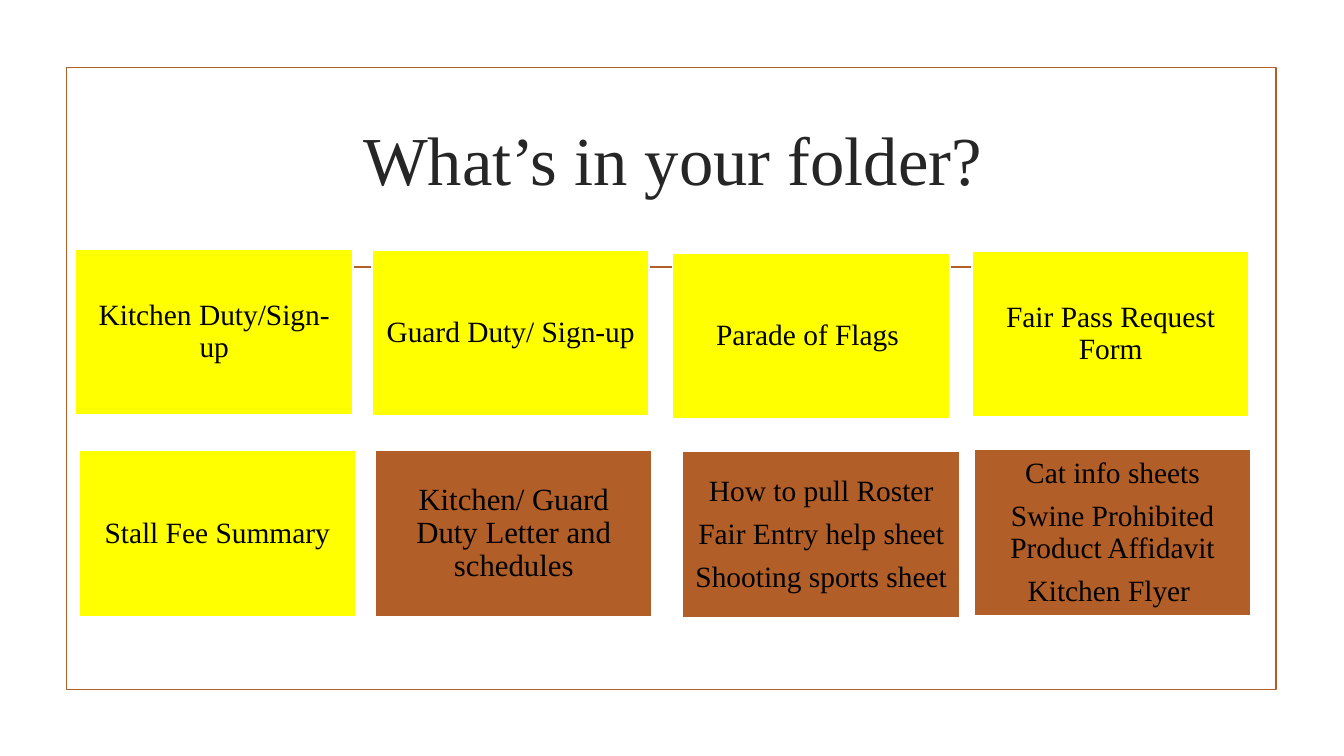
"""Build the folder contents slide: a framed title above two rows of cards."""
import pptx
import pptx.dml.color
import pptx.enum.shapes
import pptx.enum.text
import pptx.oxml
import pptx.util

Inches = pptx.util.Inches
Pt = pptx.util.Pt
RGBColor = pptx.dml.color.RGBColor
RECTANGLE = pptx.enum.shapes.MSO_SHAPE.RECTANGLE

THEME = {
    "font": "Times New Roman",
    "rust": RGBColor.from_string("B15E28"),
    "yellow": RGBColor.from_string("FFFF00"),
    "white": RGBColor.from_string("FFFFFF"),
    "black": RGBColor.from_string("000000"),
    "title": RGBColor.from_string("262626"),
    "title_size": 49,
    "card_size": 21,
    "letter_size": 22,
    "line_width": Pt(1.25),
}
CARD_WIDTH, CARD_HEIGHT = 2.75, 1.65
FRAME_FORMAT = {
    "word_wrap": True,
    "vertical_anchor": pptx.enum.text.MSO_ANCHOR.MIDDLE,
    "margin_left": Inches(0.09),
    "margin_right": Inches(0.09),
    "margin_top": Inches(0.09),
    "margin_bottom": Inches(0.09),
}
CARD_PARAGRAPH = {"line_spacing": 0.9, "space_before": Pt(0), "space_after": Pt(8)}
CARDS = [
    (0.75, 2.47, "yellow", "card_size", ["Kitchen Duty/Sign-up"]),
    (3.69, 2.48, "yellow", "card_size", ["Guard Duty/ Sign-up"]),
    (6.67, 2.51, "yellow", "card_size", ["Parade of Flags "]),
    (9.64, 2.49, "yellow", "card_size", ["Fair Pass Request Form"]),
    (0.78, 4.47, "yellow", "card_size", ["Stall Fee Summary"]),
    (3.72, 4.47, "rust", "letter_size", ["Kitchen/ Guard Duty Letter and schedules"]),
    (6.77, 4.48, "rust", "card_size",
     ["How to pull Roster", "Fair Entry help sheet", "Shooting sports sheet"]),
    (9.66, 4.46, "rust", "card_size",
     ["Cat info sheets", "Swine Prohibited Product Affidavit", "Kitchen Flyer "]),
]


def write_lines(text_frame, lines, size, color, paragraph_format):
    for name, value in FRAME_FORMAT.items():
        setattr(text_frame, name, value)
    text_frame.text = "\n".join(lines)
    for paragraph in text_frame.paragraphs:
        paragraph.alignment = pptx.enum.text.PP_ALIGN.CENTER
        for name, value in paragraph_format.items():
            setattr(paragraph, name, value)
        paragraph.font.name = THEME["font"]
        paragraph.font.size = Pt(THEME[size])
        paragraph.font.color.rgb = THEME[color]


def add_box(left, top, width, height, line_color):
    shape = slide.shapes.add_shape(
        RECTANGLE, Inches(left), Inches(top), Inches(width), Inches(height))
    shape.shadow.inherit = False
    shape.line.color.rgb = THEME[line_color]
    shape.line.width = THEME["line_width"]
    return shape


presentation = pptx.Presentation()
presentation.slide_width = Inches(13.33)
presentation.slide_height = Inches(7.5)
slide = presentation.slides.add_slide(presentation.slide_layouts[5])

border = add_box(0.66, 0.67, 12, 6.17, "rust")
border.fill.background()

divider = slide.shapes.add_connector(
    pptx.enum.shapes.MSO_CONNECTOR.STRAIGHT,
    Inches(1.53), Inches(2.65), Inches(11.81), Inches(2.65))
divider.line.color.rgb = THEME["rust"]
divider.line.width = THEME["line_width"]
properties = divider.element.spPr
properties.append(pptx.oxml.parse_xml(
    '<a:effectLst xmlns:a="http://schemas.openxmlformats.org/drawingml/2006/main"/>'))

title = slide.shapes.title
title_place = {"left": 1.42, "top": 1.07, "width": 10.5, "height": 1}
for name, value in title_place.items():
    setattr(title, name, Inches(value))
write_lines(title.text_frame, ["What’s in your folder?"], "title_size", "title", {})

for left, top, fill, size, lines in CARDS:
    card = add_box(left, top, CARD_WIDTH, CARD_HEIGHT, "white")
    card.fill.solid()
    card.fill.fore_color.rgb = THEME[fill]
    write_lines(card.text_frame, lines, size, "black", CARD_PARAGRAPH)

presentation.save("out.pptx")
